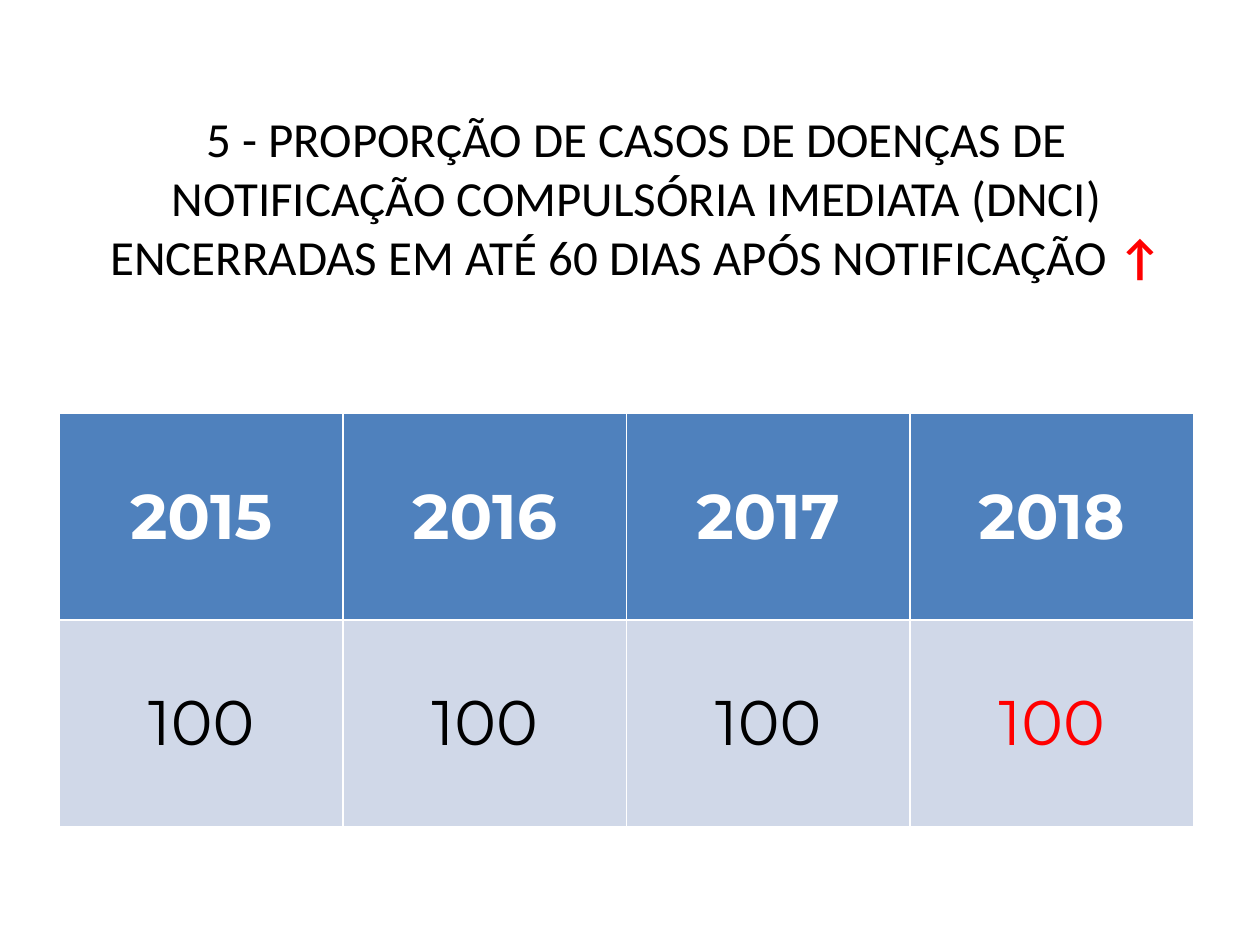
import dataclasses

import pptx
import pptx.dml.color
import pptx.enum.text
import pptx.util


@dataclasses.dataclass(frozen=True)
class Theme:
    title_font: str = "Calibri"
    table_font: str = "Montserrat"
    title_size: int = 28
    table_size: int = 36
    text: str = "000000"
    accent: str = "FF0000"
    header_text: str = "FFFFFF"
    header_fill: str = "4F81BD"
    value_fill: str = "D0D8E8"


class SlideBuilder:
    def __init__(self, presentation, theme):
        self.theme = theme
        self.slide = presentation.slides.add_slide(presentation.slide_layouts[5])

    def format_run(self, run, font, size, color, bold=False):
        run.font.name = font
        run.font.size = pptx.util.Pt(size)
        run.font.bold = bold
        run.font.color.rgb = pptx.dml.color.RGBColor.from_string(color)

    def add_title(self, text, symbol, left, top, width, height):
        shape = self.slide.shapes.title
        shape.left, shape.top = pptx.util.Pt(left), pptx.util.Pt(top)
        shape.width, shape.height = pptx.util.Pt(width), pptx.util.Pt(height)
        shape.text_frame.text = text
        shape.text_frame.vertical_anchor = pptx.enum.text.MSO_ANCHOR.MIDDLE
        paragraph = shape.text_frame.paragraphs[0]
        paragraph.alignment = pptx.enum.text.PP_ALIGN.CENTER
        theme = self.theme
        self.format_run(paragraph.runs[0], theme.title_font, theme.title_size, theme.text)
        symbol_run = paragraph.add_run()
        symbol_run.text = symbol
        self.format_run(symbol_run, theme.title_font, theme.title_size, theme.accent, True)

    def format_cell(self, cell, text, fill, color, bold):
        cell.fill.solid()
        cell.fill.fore_color.rgb = pptx.dml.color.RGBColor.from_string(fill)
        cell.vertical_anchor = pptx.enum.text.MSO_ANCHOR.MIDDLE
        cell.text_frame.text = text
        paragraph = cell.text_frame.paragraphs[0]
        paragraph.alignment = pptx.enum.text.PP_ALIGN.CENTER
        self.format_run(
            paragraph.runs[0], self.theme.table_font, self.theme.table_size, color, bold
        )

    def add_table(self, values_by_year, left, top, width, height):
        theme = self.theme
        table = self.slide.shapes.add_table(
            2, len(values_by_year), *map(pptx.util.Pt, (left, top, width, height))
        ).table
        latest_year = max(values_by_year)
        for column, (year, value) in enumerate(values_by_year.items()):
            value_color = theme.accent if year == latest_year else theme.text
            self.format_cell(
                table.cell(0, column), year, theme.header_fill, theme.header_text, True
            )
            self.format_cell(
                table.cell(1, column), value, theme.value_fill, value_color, False
            )


def main():
    presentation = pptx.Presentation()
    presentation.slide_width = pptx.util.Pt(720)
    presentation.slide_height = pptx.util.Pt(540)
    builder = SlideBuilder(presentation, Theme())
    builder.add_title(
        "5 - PROPORÇÃO DE CASOS DE DOENÇAS DE NOTIFICAÇÃO COMPULSÓRIA IMEDIATA "
        "(DNCI) ENCERRADAS EM ATÉ 60 DIAS APÓS NOTIFICAÇÃO ",
        "↑",
        39.6, 11.5, 648, 202.3,
    )
    builder.add_table(
        {"2015": "100", "2016": "100", "2017": "100", "2018": "100"},
        34, 236.2, 648, 236.2,
    )
    presentation.save("out.pptx")


if __name__ == "__main__":
    main()
